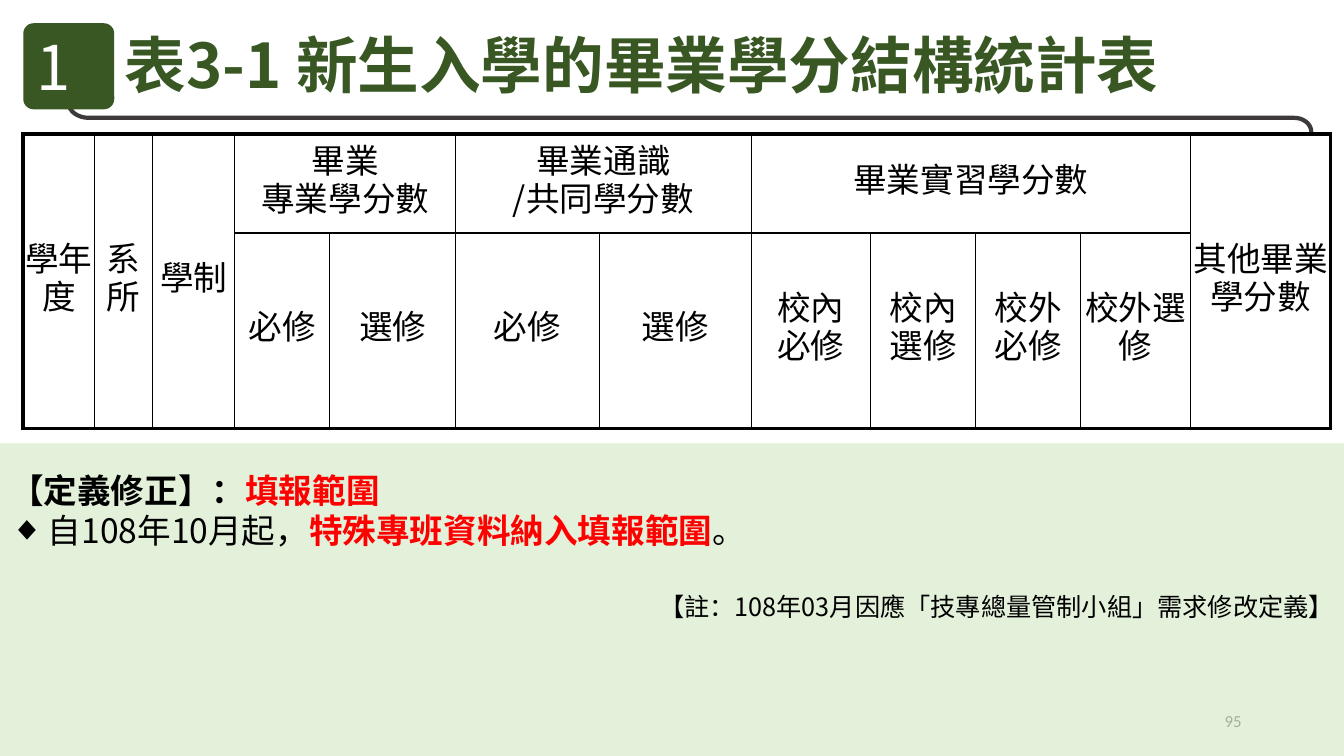
from math import cos, pi, sin

from lxml.etree import SubElement
from pptx import Presentation
from pptx.dml.color import RGBColor as RGB
from pptx.enum.shapes import MSO_SHAPE as Shape
from pptx.enum.text import MSO_ANCHOR as Anchor
from pptx.enum.text import MSO_AUTO_SIZE as Fit
from pptx.enum.text import PP_ALIGN as Align
from pptx.oxml.ns import qn
from pptx.util import Pt


class Theme:
    sans, latin = "Noto Sans CJK SC", "Calibri"
    big, main, note, small = 44, 24, 18, 12
    green, pale = RGB(0x38, 0x57, 0x23), RGB(0xC1, 0xDF, 0xAF)
    white, black = RGB(255, 255, 255), RGB(0, 0, 0)
    red, gray = RGB(255, 0, 0), RGB(0x8C, 0x8C, 0x8C)
    rule = RGB(0x3E, 0x3A, 0x39)


def style(run, size, color, bold=False, face=Theme.sans):
    """Format a run, with one face for both Latin and Chinese text."""
    font = run.font
    font.size, font.bold, font.name = Pt(size), bold, face
    font.color.rgb = color
    SubElement(run._r.get_or_add_rPr(), qn("a:ea"), typeface=face)


def place(shape, left, top, width, height):
    shape.left, shape.top = Pt(left), Pt(top)
    shape.width, shape.height = Pt(width), Pt(height)


deck = Presentation()
deck.slide_width, deck.slide_height = Pt(960), Pt(540)
slide = deck.slides.add_slide(deck.slide_layouts[1])
shapes = slide.shapes
title, body = slide.placeholders

# Rule under the title, rounded at both ends
steps = [i * pi / 16 for i in range(9)]
curve = [(63.4 - 14.4 * cos(a), 73.4 + 10.8 * sin(a)) for a in steps]
curve += [(924.5 + 12.2 * sin(a), 94.3 - 10.1 * cos(a)) for a in steps]
pen = shapes.build_freeform(Pt(49), Pt(49.7))
pen.add_line_segments([(Pt(x), Pt(y)) for x, y in curve], close=False)
rule = pen.convert_to_shape()
rule.fill.background()
rule.line.color.rgb, rule.line.width = Theme.rule, Pt(3)
rule.shadow.inherit = False

# Title and number badge
place(title, 82, 18.7, 789, 60.5)
frame = title.text_frame
frame.text = "表3-1 新生入學的畢業學分結構統計表"
frame.vertical_anchor, frame.auto_size = Anchor.MIDDLE, Fit.NONE
para = frame.paragraphs[0]
para.alignment, para.line_spacing, para.space_before = Align.LEFT, 0.9, Pt(10)
style(para.runs[0], Theme.big, Theme.green, True)

badge = shapes.add_shape(Shape.ROUNDED_RECTANGLE, Pt(16.6), Pt(16.6), Pt(65), Pt(61.5))
badge.adjustments[0] = 0.12
badge.fill.solid()
badge.fill.fore_color.rgb = Theme.green
badge.line.fill.background()
badge.shadow.inherit = False
badge.text_frame.text = "1"
style(badge.text_frame.paragraphs[0].runs[0], Theme.big, Theme.white)

# Page number
page = shapes.add_textbox(Pt(678), Pt(500.5), Pt(216), Pt(28.8)).text_frame
page.text, page.word_wrap, page.vertical_anchor = "95", True, Anchor.MIDDLE
page.paragraphs[0].alignment = Align.RIGHT
style(page.paragraphs[0].runs[0], Theme.small, Theme.gray, face=Theme.latin)

# Translucent lower band
band = shapes.add_shape(Shape.RECTANGLE, 0, Pt(316.8), Pt(960), Pt(223.2))
band.fill.solid()
band.fill.fore_color.rgb = Theme.pale
tint = band.fill._xPr.find(".//" + qn("a:srgbClr"))
SubElement(tint, qn("a:alpha"), val="45000")
band.line.fill.background()
band.shadow.inherit = False

# Credit table: (row, column, rows spanned, columns spanned, text)
widths = [51, 41.5, 58.5, 68, 90, 102.5, 108.5, 85.5, 75, 75, 78.5, 100]
heads = [
    (0, 0, 2, 1, "學年度"), (0, 1, 2, 1, "系所"), (0, 2, 2, 1, "學制"),
    (0, 3, 1, 2, "畢業\n專業學分數"), (0, 5, 1, 2, "畢業通識\n/共同學分數"),
    (0, 7, 1, 4, "畢業實習學分數"), (0, 11, 2, 1, "其他畢業學分數"),
]
subs = ["必修", "選修"] * 2 + ["校內\n必修", "校內\n選修", "校外\n必修", "校外選修"]
heads += [(1, col, 1, 1, text) for col, text in enumerate(subs, 3)]

grid = shapes.add_table(2, 12, Pt(16.6), Pt(95.8), Pt(sum(widths)), Pt(210.3)).table
grid.first_row = grid.horz_banding = False
for col, width in zip(grid.columns, widths):
    col.width = Pt(width)
grid.rows[0].height, grid.rows[1].height = Pt(70.6), Pt(139.7)

for row, col, down, across, text in heads:
    cell = grid.cell(row, col)
    if down * across > 1:
        cell.merge(grid.cell(row + down - 1, col + across - 1))
    cell.text = text
    cell.vertical_anchor = Anchor.MIDDLE
    cell.margin_left = cell.margin_right = Pt(1.4)
    cell.margin_top = cell.margin_bottom = 0
    upright = down == 2 and col < 3
    for para in cell.text_frame.paragraphs:
        para.alignment, para.line_spacing = Align.CENTER, Pt(27)
        if upright:
            para.space_before = Pt(6)
        style(para.runs[0], Theme.main, Theme.black)
    if upright:
        cell._tc.get_or_add_tcPr().set("vert", "eaVert")

for row in range(2):
    for col in range(12):
        cell = grid.cell(row, col)
        props = cell._tc.get_or_add_tcPr()
        outer = {
            "L": col == 0,
            "R": col + cell.span_width == 12 or col == 11,
            "T": row == 0,
            "B": row + cell.span_height == 2 or row == 1,
        }
        for side, thick in outer.items():
            line = SubElement(props, qn("a:ln" + side), w=str(Pt(3 if thick else 1)))
            fill = SubElement(line, qn("a:solidFill"))
            SubElement(fill, qn("a:srgbClr"), val=str(Theme.black))
        cell.fill.background()

# Definition notes, in front of the band
body.element.getparent().append(body.element)
place(body, 0, 317.5, 960, 152.6)
frame = body.text_frame
frame.auto_size, frame.vertical_anchor = Fit.NONE, Anchor.TOP
notes = [
    [("【定義修正】：", Theme.black, True), ("填報範圍", Theme.red, True)],
    [("自108年10月起，", Theme.black, False),
     ("特殊專班資料納入填報範圍", Theme.red, True), ("。", Theme.black, False)],
    [("【註：108年03月因應「技專總量管制小組」需求修改定義】", Theme.black, False)],
]
sizes = [Theme.main, Theme.main, Theme.note]
for i, (parts, size) in enumerate(zip(notes, sizes)):
    para = frame.paragraphs[0] if i == 0 else frame.add_paragraph()
    para.space_before = Pt(29 if i == 2 else 0)
    para.line_spacing = 1.5 if i == 0 else 1
    para.alignment = Align.RIGHT if i == 2 else Align.LEFT
    props = para._p.get_or_add_pPr()
    indent = Pt(27) if i == 1 else 0
    props.set("marL", str(indent))
    props.set("indent", str(-indent))
    if indent:
        SubElement(props, qn("a:buChar"), char="◆")
    else:
        SubElement(props, qn("a:buNone"))
    for text, color, bold in parts:
        run = para.add_run()
        run.text = text
        style(run, size, color, bold)

deck.save("out.pptx")
